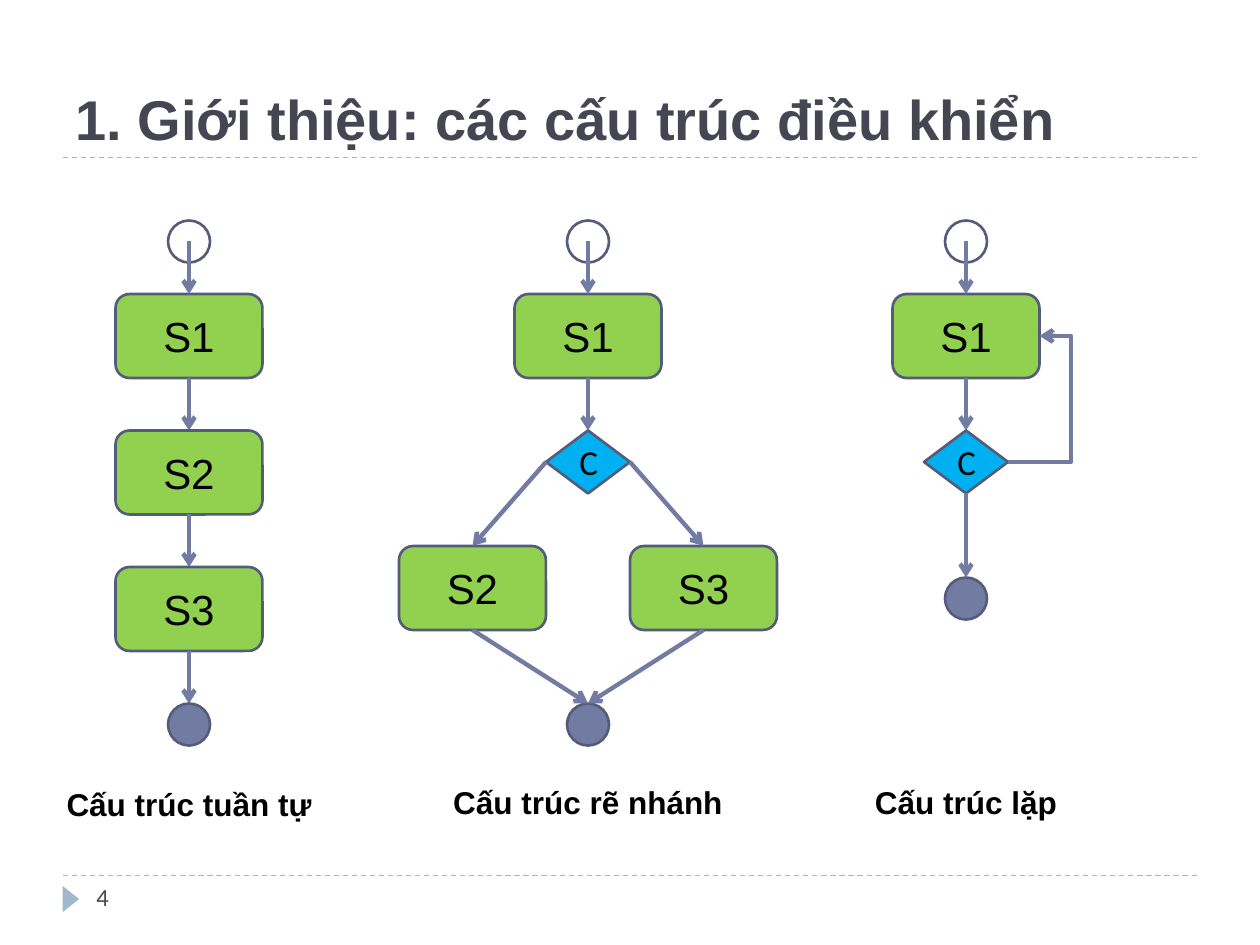
from lxml import etree
from pptx import Presentation
from pptx.dml.color import RGBColor
from pptx.enum import dml, shapes, text
from pptx.oxml import ns
from pptx.util import Pt

COLORS = {
    "title": "464653",
    "text": "000000",
    "rule": "9FB8CD",
    "step": "92D050",
    "test": "00B0F0",
    "end": "727CA3",
    "outline": "545C79",
    "arrow": "727CA3",
}
RGB = {name: RGBColor.from_string(value) for name, value in COLORS.items()}
SHAPE = shapes.MSO_SHAPE
CONNECTOR = shapes.MSO_CONNECTOR
NODES = {
    "start": (SHAPE.OVAL, 24, 24, None, None),
    "end": (SHAPE.OVAL, 24, 24, None, None),
    "step": (SHAPE.ROUNDED_RECTANGLE, 84, 48, "Arial", 24),
    "test": (SHAPE.DIAMOND, 48, 36, "Calibri", 20),
}


def add_node(group, kind, center, top, label=""):
    preset, width, height, font, size = NODES[kind]
    node = group.shapes.add_shape(preset, Pt(center - width / 2), Pt(top), Pt(width), Pt(height))
    node.shadow.inherit = False
    if kind == "start":
        node.fill.background()
    else:
        node.fill.solid()
        node.fill.fore_color.rgb = RGB[kind]
    node.line.color.rgb = RGB["outline"]
    node.line.width = Pt(1.5)
    if label:
        frame = node.text_frame
        frame.vertical_anchor = text.MSO_ANCHOR.MIDDLE
        para = frame.paragraphs[0]
        para.text = label
        para.alignment = text.PP_ALIGN.CENTER
        para.font.name = font
        para.font.size = Pt(size)
        para.font.color.rgb = RGB["text"]


def add_line(parent, start, end, color, width, kind=CONNECTOR.STRAIGHT, arrow=True):
    line = parent.shapes.add_connector(kind, *(Pt(value) for value in (*start, *end)))
    line.line.color.rgb = RGB[color]
    line.line.width = Pt(width)
    if arrow:
        tail = etree.SubElement(line.line._get_or_add_ln(), ns.qn("a:tailEnd"))
        tail.set("type", "arrow")
    etree.SubElement(line._element.spPr, ns.qn("a:effectLst"))
    return line


deck = Presentation()
deck.slide_width, deck.slide_height = Pt(720), Pt(540)
page = deck.slides.add_slide(deck.slide_layouts[6])

for y in (90, 500.4):
    rule = add_line(page, (36, y), (684, y), "rule", 0.75, arrow=False)
    rule.line.dash_style = dml.MSO_LINE.DASH

marker = page.shapes.add_shape(SHAPE.ISOSCELES_TRIANGLE, Pt(33), Pt(509), Pt(15), Pt(9.5))
marker.rotation = 90
marker.shadow.inherit = False
marker.fill.solid()
marker.fill.fore_color.rgb = RGB["rule"]
marker.line.fill.background()

LEFT, CENTER = text.PP_ALIGN.LEFT, text.PP_ALIGN.CENTER
TOP, BOTTOM = text.MSO_ANCHOR.TOP, text.MSO_ANCHOR.BOTTOM
for words, left, top, width, height, font, size, bold, color, align, anchor in (
    ("1. Giới thiệu: các cấu trúc điều khiển", 36, 18, 648, 72, "Arial", 32, True, "title", LEFT, BOTTOM),
    ("4", 48, 500.4, 156, 29, "Calibri", 14, False, "title", LEFT, TOP),
    ("Cấu trúc tuần tự", 24, 445, 168, 29, "Arial", 18, True, "text", CENTER, TOP),
    ("Cấu trúc rẽ nhánh", 246, 444, 180, 29, "Arial", 18, True, "text", CENTER, TOP),
    ("Cấu trúc lặp", 462, 444, 180, 29, "Arial", 18, True, "text", CENTER, TOP),
):
    box = page.shapes.add_textbox(Pt(left), Pt(top), Pt(width), Pt(height))
    frame = box.text_frame
    frame.word_wrap = True
    frame.vertical_anchor = anchor
    para = frame.paragraphs[0]
    para.text = words
    para.alignment = align
    para.font.name = font
    para.font.size = Pt(size)
    para.font.bold = bold
    para.font.color.rgb = RGB[color]

SEQUENCE_X, BRANCH_X, LOOP_X = 108, 336, 552
sequence, branch, loop = (page.shapes.add_group_shape() for _ in range(3))

for group, x in ((sequence, SEQUENCE_X), (branch, BRANCH_X), (loop, LOOP_X)):
    add_node(group, "start", x, 126)
    add_node(group, "step", x, 168, "S1")
    add_line(group, (x, 138), (x, 168), "arrow", 2.5)
    add_line(group, (x, 216), (x, 246), "arrow", 2.5)

for label, top in (("S2", 246), ("S3", 324)):
    add_node(sequence, "step", SEQUENCE_X, top, label)
    add_line(sequence, (SEQUENCE_X, top + 48), (SEQUENCE_X, top + 78), "arrow", 2.5)
add_node(sequence, "end", SEQUENCE_X, 402)

add_node(branch, "test", BRANCH_X, 246, "C")
add_node(branch, "end", BRANCH_X, 402)
for label, side in (("S2", -1), ("S3", 1)):
    x = BRANCH_X + side * 66
    add_node(branch, "step", x, 312, label)
    add_line(branch, (BRANCH_X + side * 24, 264), (x, 312), "arrow", 2.5)
    add_line(branch, (x, 360), (BRANCH_X, 402), "arrow", 2.5)

add_node(loop, "test", LOOP_X, 246, "C")
add_node(loop, "end", LOOP_X, 330)
add_line(loop, (LOOP_X, 282), (LOOP_X, 330), "arrow", 2.5)
back = add_line(loop, (LOOP_X + 24, 264), (LOOP_X + 42, 192), "arrow", 2.5, CONNECTOR.ELBOW)
bend = etree.SubElement(back._element.spPr.find(ns.qn("a:prstGeom")).find(ns.qn("a:avLst")), ns.qn("a:gd"))
bend.set("name", "adj1")
bend.set("fmla", "val 200000")

deck.save("out.pptx")
